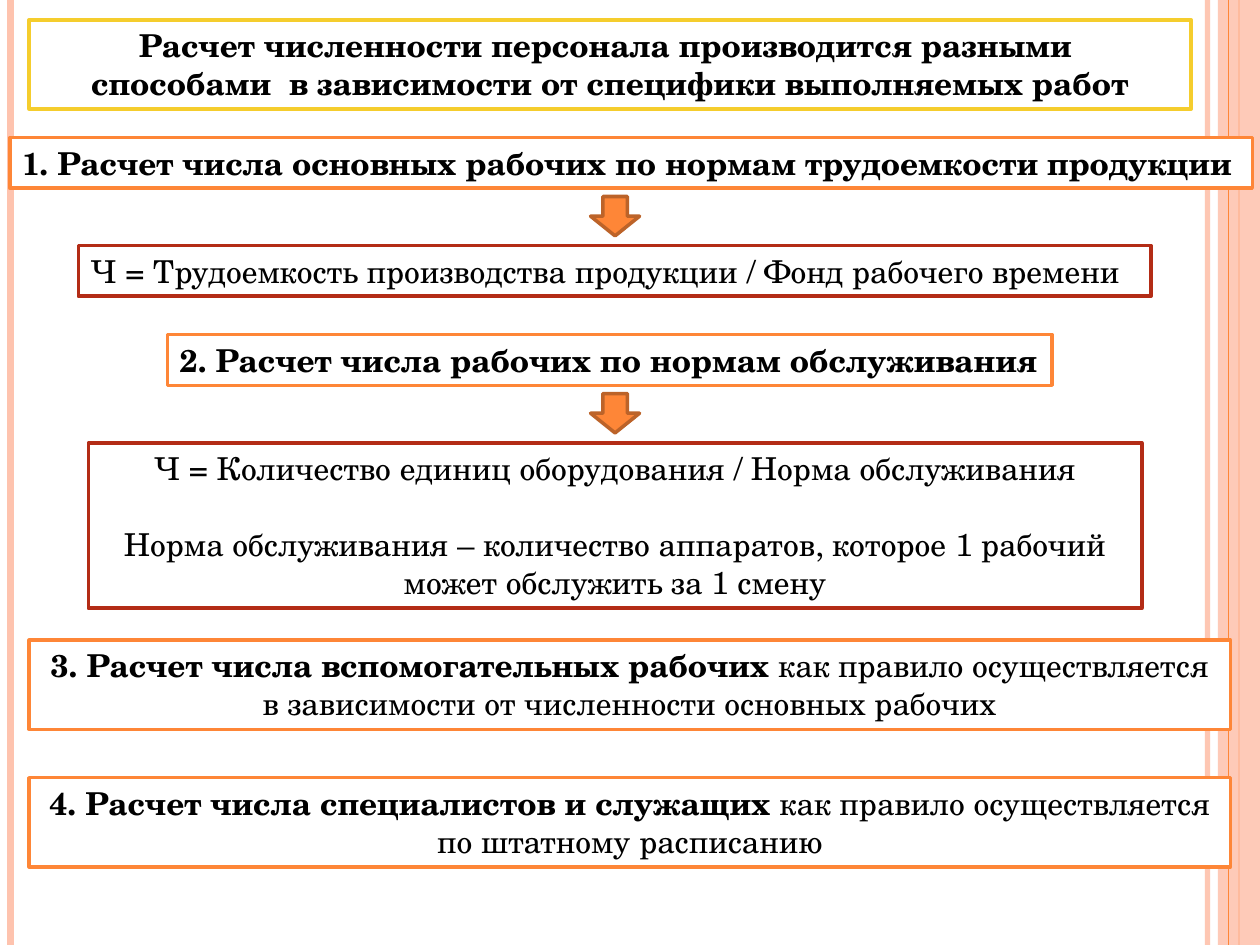
from dataclasses import dataclass
from typing import NamedTuple

from lxml.etree import SubElement as Sub
from pptx import Presentation
from pptx.dml.color import RGBColor as Rgb
from pptx.enum.shapes import MSO_CONNECTOR as Link, MSO_SHAPE as Form
from pptx.enum.text import MSO_AUTO_SIZE as Fit, PP_ALIGN as Align
from pptx.oxml.ns import qn
from pptx.util import Pt

WIDE, HIGH = 720, 540


@dataclass(frozen=True)
class Theme:
    white: str = "FFFFFF"
    black: str = "000000"
    pink: str = "FEC3AE"
    orange: str = "FE8637"
    rust: str = "BC6329"
    red: str = "B32C16"
    gold: str = "F5CD2D"
    face: str = "TeX Gyre Schola"
    size: float = 18
    edge: float = 2
    gap: float = 21.7


class Run(NamedTuple):
    text: str
    bold: bool = False


class Rule(NamedTuple):
    x: float
    color: str
    width: float
    alpha: int = 100


class Box(NamedTuple):
    left: float
    top: float
    width: float
    height: float
    edge: str
    paras: tuple[tuple[Run, ...], ...]
    wrap: bool = True


LOOK = Theme()
ONE, TWO, FOUR = 29, 51, 94.5  # box heights by number of text lines

RULES = (
    Rule(690, LOOK.pink, 3, 93),
    Rule(6, LOOK.pink, 4.5),
    Rule(708, LOOK.orange, 1.5),
)
THIN = Rule(702, LOOK.orange, 0.75)

BOXES = (
    Box(16.7, 11.3, 664, TWO, LOOK.gold, (
        (Run("Расчет численности персонала производится разными ", True),),
        (Run("способами  в зависимости от специфики выполняемых работ", True),),
    )),
    Box(5.6, 78.6, 710, ONE, LOOK.orange, (
        (Run("1. Расчет числа основных рабочих по нормам трудоемкости продукции", True),),
    ), False),
    Box(44.8, 140.3, 613, ONE, LOOK.red, (
        (Run("Ч = Трудоемкость производства продукции / Фонд рабочего времени"),),
    ), False),
    Box(95.6, 191.2, 505.5, ONE, LOOK.orange, (
        (Run("2. Расчет числа рабочих по нормам обслуживания", True),),
    ), False),
    Box(50.5, 253.1, 602, FOUR, LOOK.red, (
        (Run("Ч = Количество единиц оборудования / Норма обслуживания"),),
        (Run("Норма обслуживания – количество аппаратов, которое 1 рабочий "
             "может обслужить за 1 смену"),),
    )),
    Box(16.7, 365.8, 686.4, TWO, LOOK.orange, (
        (Run("3. Расчет числа вспомогательных рабочих", True),
         Run(" как правило осуществляется в зависимости от численности основных рабочих")),
    )),
    Box(16.7, 444.4, 686.4, TWO, LOOK.orange, (
        (Run("4. Расчет числа специалистов и служащих", True),
         Run(" как правило осуществляется по штатному расписанию")),
    )),
)
NORM = BOXES[4]
ARROWS = (112.3, 224.9)


def fade(node, alpha: int) -> None:
    """Set the opacity, in percent, of the solid colour inside node."""
    color = next(node.iter(qn("a:srgbClr")))
    Sub(color, qn("a:alpha"), val=str(alpha * 1000))


def paint(shape, fill: str, edge: str | None = None) -> None:
    shape.fill.solid()
    shape.fill.fore_color.rgb = Rgb.from_string(fill)
    if edge is None:
        shape.line.fill.background()
    else:
        shape.line.color.rgb = Rgb.from_string(edge)
        shape.line.width = Pt(LOOK.edge)


def draw_rule(slide, rule: Rule) -> None:
    line = slide.shapes.add_connector(
        Link.STRAIGHT, Pt(rule.x), Pt(0), Pt(rule.x), Pt(HIGH))
    line.line.color.rgb = Rgb.from_string(rule.color)
    line.line.width = Pt(rule.width)
    props = line._element.spPr
    if rule.alpha < 100:
        fade(props, rule.alpha)
    Sub(props, qn("a:effectLst"))


def draw_form(slide, form: Form, left: float, top: float, width: float,
              height: float, fill: str, edge: str | None = None):
    shape = slide.shapes.add_shape(form, Pt(left), Pt(top), Pt(width), Pt(height))
    shape.shadow.inherit = False
    paint(shape, fill, edge)
    return shape


def draw_box(slide, box: Box) -> None:
    shape = slide.shapes.add_textbox(*map(Pt, box[:4]))
    paint(shape, LOOK.white, box.edge)
    frame = shape.text_frame
    frame.word_wrap = box.wrap
    frame.auto_size = Fit.SHAPE_TO_FIT_TEXT
    for i, runs in enumerate(box.paras):
        para = frame.add_paragraph() if i else frame.paragraphs[0]
        para.alignment = Align.CENTER if box.wrap else Align.LEFT
        if i and box is NORM:
            para.space_before = Pt(LOOK.gap)
        for text, bold in runs:
            run = para.add_run()
            run.text = text
            form = {"name": LOOK.face, "size": Pt(LOOK.size), "bold": bold}
            for key, value in form.items():
                setattr(run.font, key, value)
            run.font.color.rgb = Rgb.from_string(LOOK.black)


def main() -> None:
    deck = Presentation()
    deck.slide_width, deck.slide_height = Pt(WIDE), Pt(HIGH)
    slide = deck.slides.add_slide(deck.slide_layouts[6])
    for rule in RULES:
        draw_rule(slide, rule)
    band = draw_form(slide, Form.RECTANGLE, 696, 0, 24, HIGH, LOOK.pink)
    fade(band._element.spPr, 87)
    draw_rule(slide, THIN)
    for box in BOXES:
        draw_box(slide, box)
    for top in ARROWS:
        draw_form(slide, Form.DOWN_ARROW, 337.5, top, 28, 22.5,
                  LOOK.orange, LOOK.rust)
    deck.save("out.pptx")


if __name__ == "__main__":
    main()
